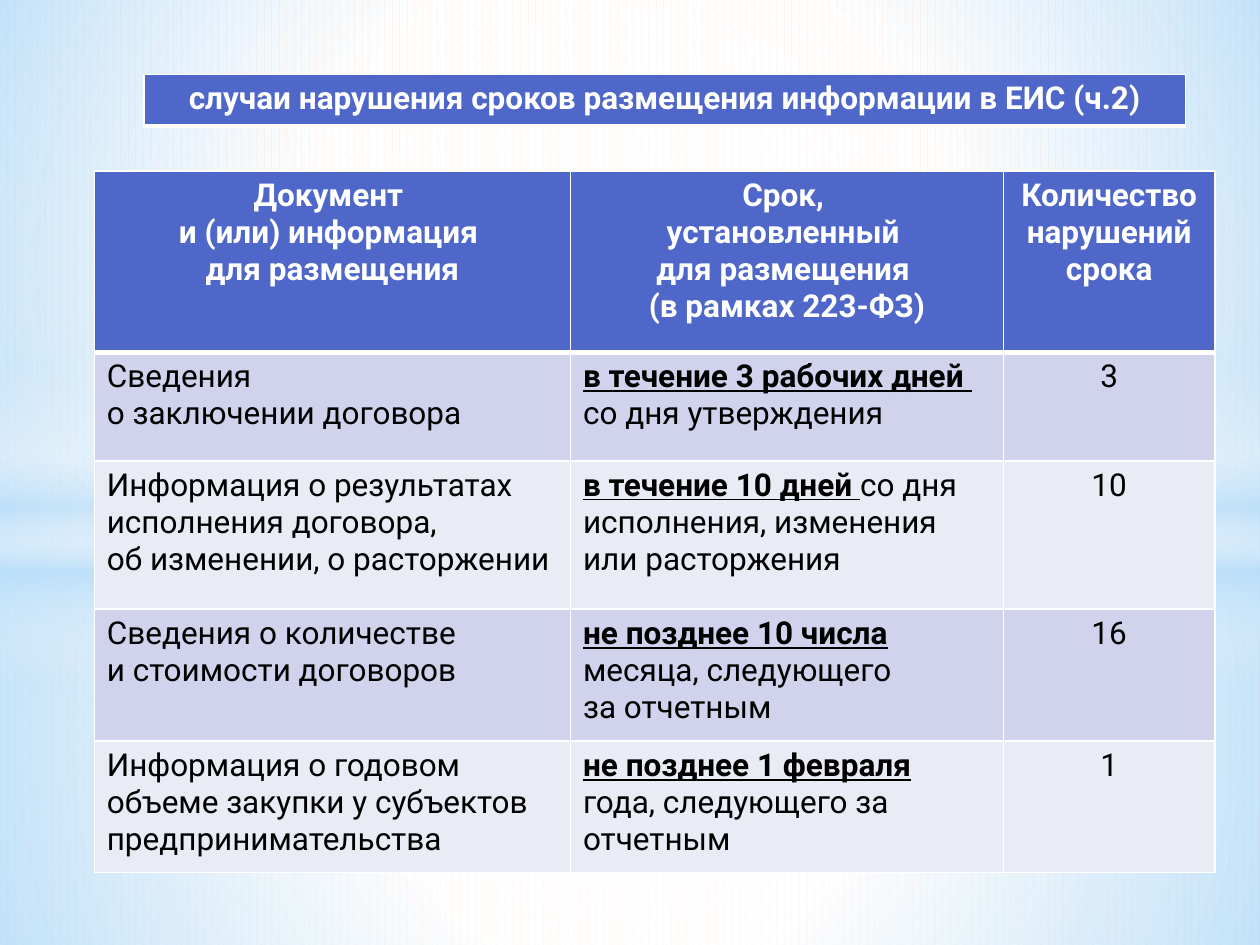
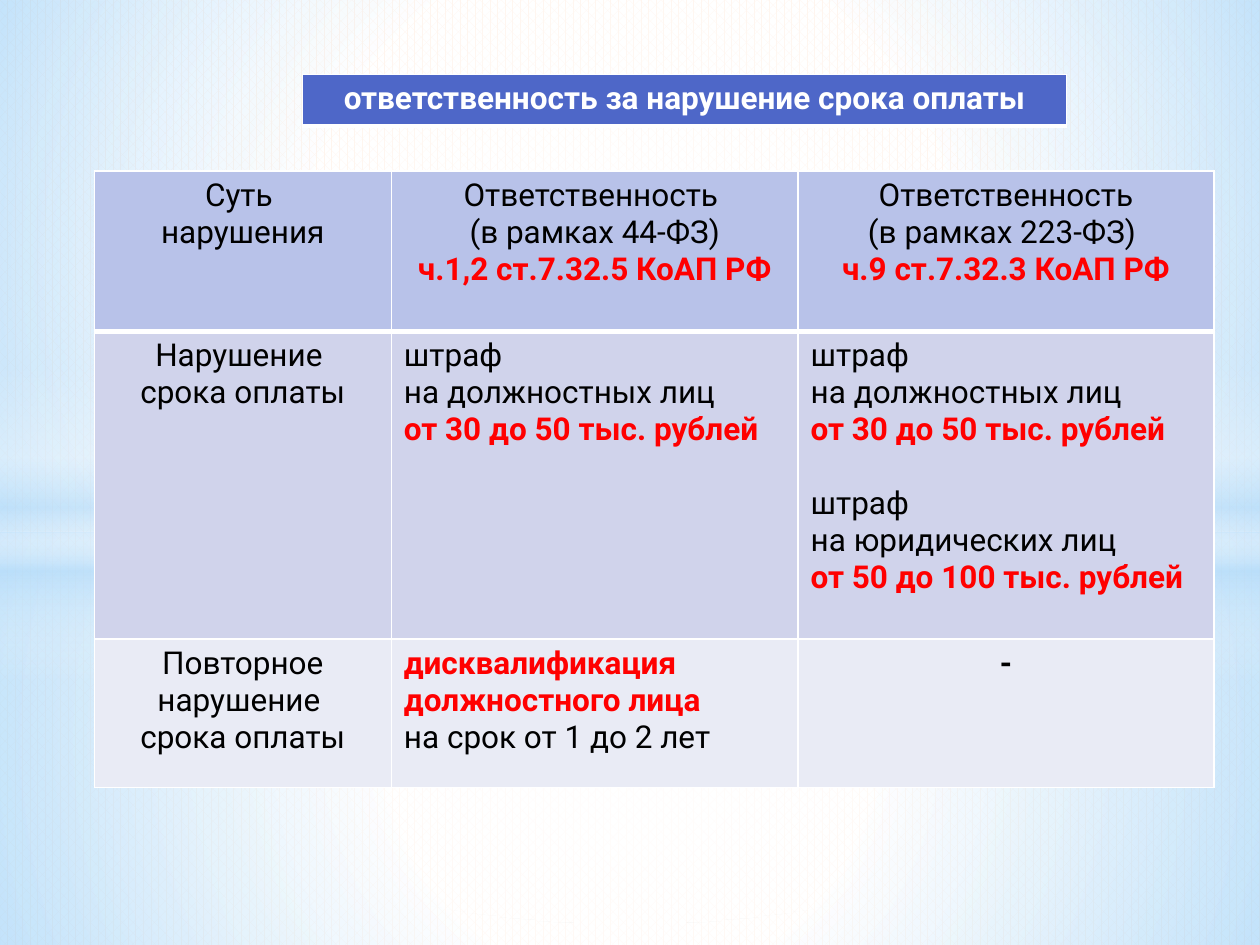
from lxml.etree import SubElement
from pptx import Presentation
from pptx.dml.color import RGBColor
from pptx.enum.dml import MSO_PATTERN
from pptx.enum.shapes import MSO_SHAPE
from pptx.enum.text import PP_ALIGN
from pptx.oxml.ns import qn
from pptx.util import Cm, Pt

COLORS = {
    "white": "FFFFFF", "black": "000000", "red": "FF0000",
    "peach": "FFE6D3", "sky": "B4DCFA", "blue": "4E67C8",
    "pale_blue": "B8C2E9", "band_dark": "D0D3EB", "band_light": "E9EBF5",
}
FONT = "Roboto"
TEXT_SIZE = Pt(18)
BLANK_LINE = Pt(21)
RUN_STYLES = {
    "_": {"bold": True, "underline": True},
    "!": {"bold": True, "color": "red"},
    "*": {"bold": True},
}

BACKDROP = [
    (MSO_SHAPE.RECTANGLE, (0, 10.74, 25.4, 8.31), "circle",
     [(0, "white", 91), (37, "white", 76), (100, "sky", 79)]),
    (MSO_SHAPE.RECTANGLE, (0, 0, 25.4, 10.74), "circle",
     [(0, "white", 89), (48, "white", 62), (100, "sky", 79)]),
    (MSO_SHAPE.RECTANGLE, (0, 7.37, 25.4, 6.35), "linear",
     [(0, "white", 0), (29, "white", 30), (45, "sky", 40),
      (55, "white", 26), (65, "sky", 60), (100, "white", 0)]),
    (MSO_SHAPE.OVAL, (0, 4.45, 25.4, 14.17), "circle",
     [(0, "white", 100), (54, "white", 0)]),
]

DEADLINE_ROWS = [
    ["Документ \nи (или) информация \nдля размещения",
     "Срок, \nустановленный \nдля размещения \n(в рамках 223-ФЗ)",
     "Количество нарушений срока"],
    ["Сведения\nо заключении договора",
     "_в течение 3 рабочих дней \nсо дня утверждения", "3"],
    ["Информация о результатах исполнения договора,\n"
     "об изменении, о расторжении",
     "_в течение 10 дней |со дня исполнения, изменения или расторжения", "10"],
    ["Сведения о количестве\nи стоимости договоров",
     "_не позднее 10 числа |месяца, следующего\nза отчетным", "16"],
    ["Информация о годовом объеме закупки у субъектов предпринимательства",
     "_не позднее 1 февраля |года, следующего за отчетным", "1"],
]

OFFICIAL_FINE = "штраф\nна должностных лиц\n!от 30 до 50 тыс. рублей"
COMPANY_FINE = "+штраф\nна юридических лиц\n!от 50 до 100 тыс. рублей"
LIABILITY_ROWS = [
    ["Суть \nнарушения",
     "Ответственность \n(в рамках 44-ФЗ)\n!ч.1,2 ст.7.32.5 КоАП РФ",
     "Ответственность\n(в рамках 223-ФЗ) \n!ч.9 ст.7.32.3 КоАП РФ"],
    ["Нарушение \nсрока оплаты", OFFICIAL_FINE, f"{OFFICIAL_FINE}\n{COMPANY_FINE}"],
    ["Повторное нарушение \nсрока оплаты",
     "!дисквалификация должностного лица\nна срок от 1 до 2 лет", "*-"],
]


def rgb(name):
    return RGBColor.from_string(COLORS[name])


def add_color(parent, name, opacity=100):
    color = SubElement(parent, qn("a:srgbClr"), val=COLORS[name])
    if opacity < 100:
        SubElement(color, qn("a:alpha"), val=str(opacity * 1000))


class Deck:
    def __init__(self):
        self.presentation = Presentation()
        self.presentation.slide_width = Cm(25.4)
        self.presentation.slide_height = Cm(19.05)
        self.slide = None

    def add_slide(self):
        self.slide = self.presentation.slides.add_slide(
            self.presentation.slide_layouts[6])

    def backdrop(self):
        master = self.presentation.slide_master
        fill = master.background.fill
        fill.patterned()
        fill.pattern = MSO_PATTERN.PERCENT_60
        fill.fore_color.rgb = rgb("peach")
        fill.back_color.rgb = rgb("white")
        tree = master.element.cSld.spTree
        for index, (kind, box, flow, stops) in enumerate(BACKDROP):
            shape = self.gradient_shape(kind, box, flow, stops)
            shape.element.nvSpPr.cNvPr.set("id", str(100 + index))
            tree.insert(2 + index, shape.element)

    def gradient_shape(self, kind, box, flow, stops):
        shape = self.slide.shapes.add_shape(kind, *map(Cm, box))
        shape.shadow.inherit = False
        shape.line.fill.background()
        shape.fill.gradient()
        gradient = shape.element.spPr.find(qn("a:gradFill"))
        for child in list(gradient):
            gradient.remove(child)
        stop_list = SubElement(gradient, qn("a:gsLst"))
        for position, color, opacity in stops:
            stop = SubElement(stop_list, qn("a:gs"), pos=str(position * 1000))
            add_color(stop, color, opacity)
        if flow == "linear":
            SubElement(gradient, qn("a:lin"), ang="5400000", scaled="0")
        else:
            center = SubElement(gradient, qn("a:path"), path=flow)
            SubElement(center, qn("a:fillToRect"),
                       **dict.fromkeys("ltrb", "50000"))
        return shape

    def title(self, text, left, width):
        self.table([["*" + text]], left, 1.5, [width], [1.04], "blue", "white")

    def table(self, rows, left, top, widths, heights, header_fill,
              header_color, centered_columns=()):
        table = self.slide.shapes.add_table(
            len(rows), len(widths), Cm(left), Cm(top),
            Cm(sum(widths)), Cm(sum(heights))).table
        for column, width in zip(table.columns, widths):
            column.width = Cm(width)
        for row, height in zip(table.rows, heights):
            row.height = Cm(height)
        for row_index, texts in enumerate(rows):
            header = row_index == 0
            band = "band_dark" if row_index % 2 else "band_light"
            for column_index, text in enumerate(texts):
                cell = table.cell(row_index, column_index)
                centered = (header or column_index in centered_columns
                            or text.startswith("*"))
                self.cell_text(cell, text, header_color if header else "black",
                               header and header_color == "white", centered)
                self.borders(cell, 3 if row_index == 1 else 1, 3 if header else 1)
                cell.fill.solid()
                cell.fill.fore_color.rgb = rgb(header_fill if header else band)

    def cell_text(self, cell, text, color, bold, centered):
        frame = cell.text_frame
        for index, line in enumerate(text.split("\n")):
            paragraph = frame.add_paragraph() if index else frame.paragraphs[0]
            paragraph.alignment = PP_ALIGN.CENTER if centered else PP_ALIGN.LEFT
            paragraph.font.name = FONT
            paragraph.font.size = TEXT_SIZE
            if line.startswith("+"):
                paragraph.space_before = BLANK_LINE
                line = line[1:]
            for piece in line.split("|"):
                style = RUN_STYLES.get(piece[0], {})
                run = paragraph.add_run()
                run.text = piece[1:] if style else piece
                run.font.bold = style.get("bold", bold)
                run.font.underline = style.get("underline")
                run.font.color.rgb = rgb(style.get("color", color))

    def borders(self, cell, top, bottom):
        properties = cell._tc.get_or_add_tcPr()
        for side, width in (("L", 1), ("R", 1), ("T", top), ("B", bottom)):
            line = SubElement(properties, qn(f"a:ln{side}"), w=str(Pt(width)))
            add_color(SubElement(line, qn("a:solidFill")), "white")


def main():
    deck = Deck()
    deck.add_slide()
    deck.backdrop()
    deck.table(DEADLINE_ROWS, 1.9, 3.45, [9.6, 8.73, 4.26],
               [3.65, 2.19, 2.99, 2.66, 2.65], "blue", "white", {2})
    deck.title("случаи нарушения сроков размещения информации в ЕИС (ч.2)", 2.9, 21)

    deck.add_slide()
    deck.table(LIABILITY_ROWS, 1.9, 3.45, [5.99, 8.2, 8.38],
               [3.23, 6.2, 3], "pale_blue", "black", {0})
    deck.title("ответственность за нарушение срока оплаты", 6.1, 15.4)
    deck.presentation.save("out.pptx")


if __name__ == "__main__":
    main()
